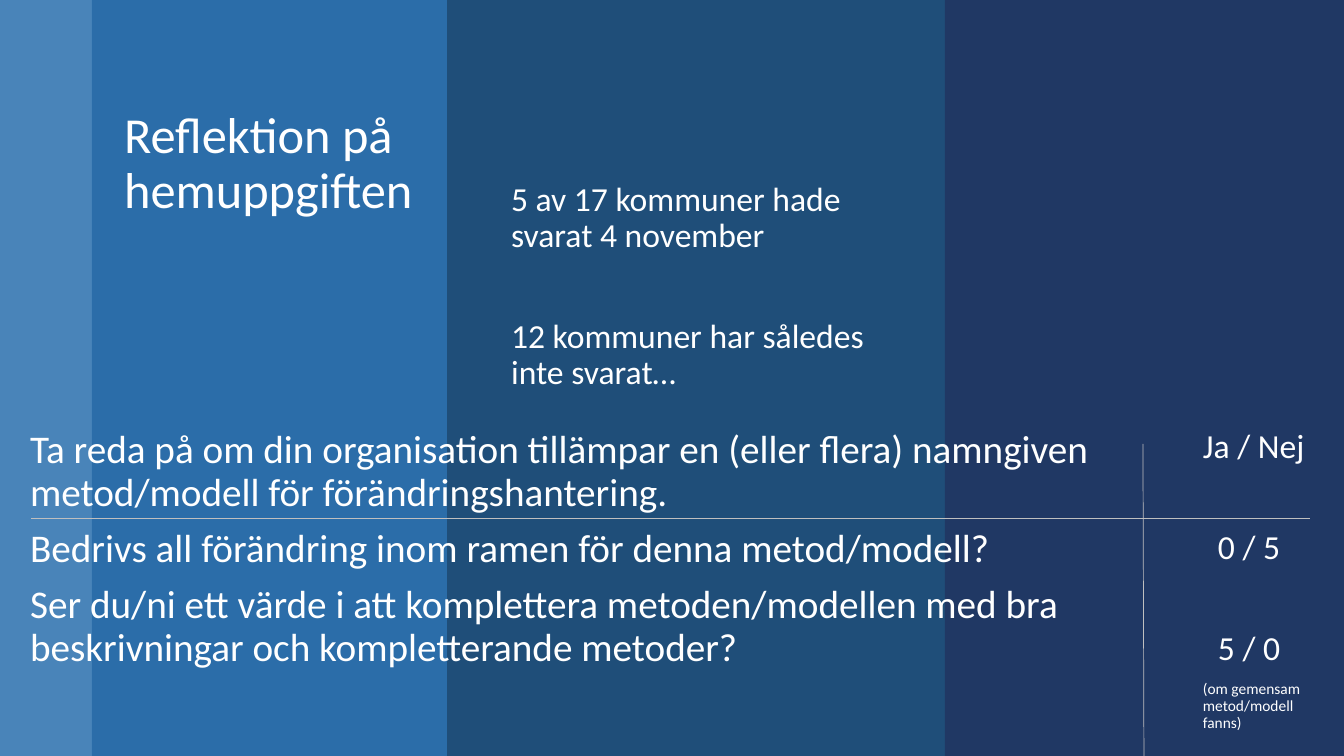
from lxml import etree
from pptx import Presentation
from pptx.dml.color import RGBColor
from pptx.enum.shapes import MSO_CONNECTOR, MSO_SHAPE
from pptx.enum.text import MSO_ANCHOR, MSO_AUTO_SIZE, PP_ALIGN
from pptx.oxml.ns import qn
from pptx.util import Pt

RECT = MSO_SHAPE.RECTANGLE
LINE = MSO_CONNECTOR.STRAIGHT
SCALE = 12192000 / 1344
THEME = {
    "font": "Calibri", "text": "FFFFFF", "back": "1F4E79", "rule": "BFBFBF",
    "pale": "5B9BD5", "blue": "2E75B6", "navy": "203864",
    "title": 36, "large": 28, "body": 24, "note": 11,
}


def px(*nums):
    return [round(n * SCALE) for n in nums]


def write(shape, box, paras):
    shape.left, shape.top, shape.width, shape.height = px(*box)
    frame = shape.text_frame
    form = {"word_wrap": True, "auto_size": MSO_AUTO_SIZE.NONE,
            "vertical_anchor": MSO_ANCHOR.TOP}
    for key, val in form.items():
        setattr(frame, key, val)
    for i, (text, size, gap, inset) in enumerate(paras):
        para = frame.add_paragraph() if i else frame.paragraphs[0]
        form = {"alignment": PP_ALIGN.LEFT, "line_spacing": 0.9,
                "space_before": Pt(gap), "space_after": Pt(0)}
        for key, val in form.items():
            setattr(para, key, val)
        props = para._p.get_or_add_pPr()
        props.set("marL", str(px(inset)[0]))
        props.set("indent", "0")
        etree.SubElement(props, qn("a:buNone"))
        run = para.add_run()
        run.text = text
        run.font.name = THEME["font"]
        run.font.size = Pt(THEME[size])
        run.font.color.rgb = RGBColor.from_string(THEME["text"])


deck = Presentation()
deck.slide_width, deck.slide_height = px(1344, 756)
slide = deck.slides.add_slide(deck.slide_layouts[3])
back = slide.background.fill
back.solid()
back.fore_color.rgb = RGBColor.from_string(THEME["back"])

bands = [(0, 92, "pale", 70), (92, 355, "blue", 80), (945, 399, "navy", 100)]
for i, (left, width, tone, alpha) in enumerate(bands):
    band = slide.shapes.add_shape(RECT, *px(left, 0, width, 756))
    band.shadow.inherit = False
    band.line.fill.background()
    band.fill.solid()
    band.fill.fore_color.rgb = RGBColor.from_string(THEME[tone])
    if alpha < 100:
        tint = band._element.spPr.find(".//" + qn("a:srgbClr"))
        etree.SubElement(tint, qn("a:alpha")).set("val", str(alpha * 1000))
    slide.shapes._spTree.insert(2 + i, band._element)

title, status, tasks = slide.placeholders
write(title, (114, 105, 311, 496), [("Reflektion på hemuppgiften", "title", 0, 0)])
write(status, (501, 177, 377, 248), [
    ("5 av 17 kommuner hade svarat 4 november", "body", 10, 0),
    ("12 kommuner har således inte svarat…", "body", 46, 0),
])
write(tasks, (20, 425, 1082, 329), [(text, "large", 10, 0) for text in (
    "Ta reda på om din organisation tillämpar en (eller flera) namngiven metod/modell för förändringshantering.",
    "Bedrivs all förändring inom ramen för denna metod/modell?",
    "Ser du/ni ett värde i att komplettera metoden/modellen med bra beskrivningar och kompletterande metoder?",
)])
votes = slide.shapes.add_textbox(0, 0, 0, 0)
write(votes, (1193, 425, 133, 367), [
    ("Ja / Nej", "body", 10, 0),
    ("0 / 5", "body", 46, 15),
    ("5 / 0", "body", 46, 15),
    ("(om gemensam metod/modell fanns)", "note", 10, 0),
])

for ends in [(31, 518, 1310, 518), (1144, 756, 1143, 444)]:
    rule = slide.shapes.add_connector(LINE, *px(*ends))
    rule.line.color.rgb = RGBColor.from_string(THEME["rule"])
    rule.line.width = Pt(0.5)
    etree.SubElement(rule._element.spPr, qn("a:effectLst"))

deck.save("out.pptx")
